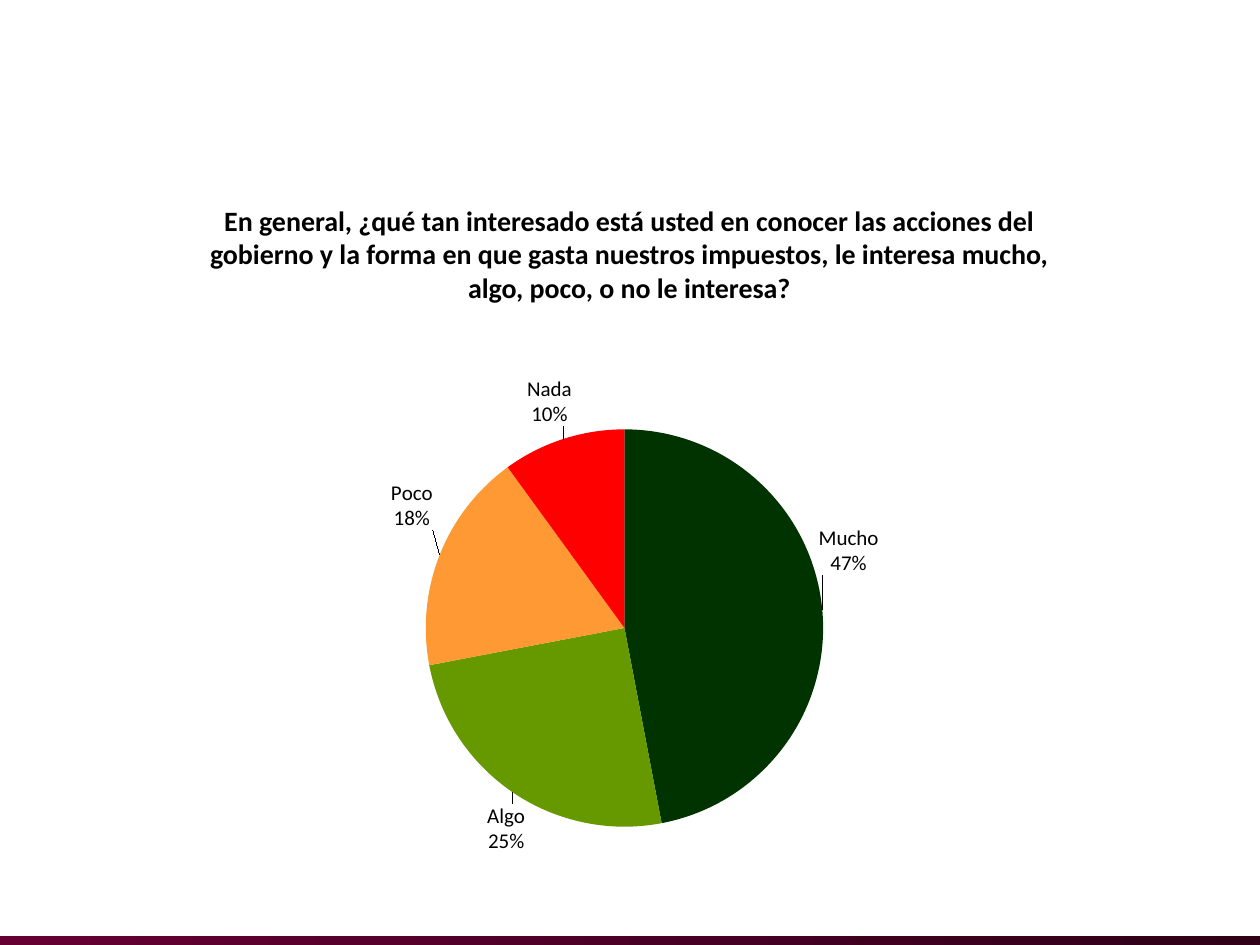
from lxml.etree import SubElement
from pptx import Presentation
from pptx.chart.data import CategoryChartData
from pptx.dml.color import RGBColor
from pptx.enum.chart import XL_CHART_TYPE as ChartType, XL_LABEL_POSITION as LabelPosition
from pptx.enum.shapes import MSO_SHAPE as Shape
from pptx.enum.text import PP_ALIGN as Align
from pptx.oxml.ns import qn
from pptx.util import Emu, Pt

PIXELS_PER_INCH = 126
QUESTION = (
    "En general, ¿qué tan interesado está usted en conocer las acciones del gobierno "
    "y la forma en que gasta nuestros impuestos, le interesa mucho, algo, poco, o no le interesa?"
)
ANSWERS = [
    ("Mucho", 47, "003300", (-0.02, -0.06)),
    ("Algo", 25, "669900", (0.03, 0.01)),
    ("Poco", 18, "FF9933", (0, -0.04)),
    ("Nada", 10, "FF0000", (0.02, -0.01)),
]


def px(length):
    return Emu(round(length * 914400 / PIXELS_PER_INCH))


def color(value):
    return RGBColor.from_string(value)


def set_format(target, values):
    for name, value in values.items():
        setattr(target, name, value)


def fill_layout(layout, values):
    manual = SubElement(layout, qn("c:manualLayout"))
    for name, value in values.items():
        SubElement(manual, qn(f"c:{name}")).set("val", str(value))


class SlideBuilder:
    font_name = "Calibri"
    text_color = "000000"

    def __init__(self, slide):
        self.slide = slide

    def style_font(self, font, size, bold=False):
        set_format(font, {"name": self.font_name, "size": Pt(size), "bold": bold})
        font.color.rgb = color(self.text_color)

    def gradient_bar(self, left, top, width, height, colors):
        bar = self.slide.shapes.add_shape(Shape.RECTANGLE, *map(px, (left, top, width, height)))
        bar.shadow.inherit = False
        bar.line.fill.background()
        bar.fill.gradient()
        bar.fill.gradient_angle = 0
        for stop, value, position in zip(bar.fill.gradient_stops, colors, (0, 1)):
            stop.color.rgb = color(value)
            stop.position = position

    def heading(self, left, top, width, height, text, size):
        box = self.slide.shapes.add_textbox(*map(px, (left, top, width, height)))
        box.text_frame.word_wrap = True
        para = box.text_frame.paragraphs[0]
        para.alignment = Align.CENTER
        span = para.add_run()
        span.text = text
        self.style_font(span.font, size, bold=True)

    def pie(self, left, top, width, height, answers, plot_layout):
        data = CategoryChartData()
        data.categories = [answer[0] for answer in answers]
        data.add_series("Series 1", [answer[1] for answer in answers])
        frame = self.slide.shapes.add_chart(ChartType.PIE, *map(px, (left, top, width, height)), data)
        chart = frame.chart
        set_format(chart, {"has_legend": False, "has_title": False})
        self.style_font(chart.font, 14)
        plot = chart.plots[0]
        plot.vary_by_categories = True

        area = chart.element.find(".//" + qn("c:plotArea"))
        layout = area.find(qn("c:layout"))
        if layout is None:
            layout = SubElement(area, qn("c:layout"))
            area.insert(0, layout)
        fill_layout(layout, plot_layout)

        for index, (_, _, fill_color, offset) in enumerate(answers):
            point = plot.series[0].points[index]
            point.format.fill.solid()
            point.format.fill.fore_color.rgb = color(fill_color)
            self.style_font(point.data_label.font, 12)
            point.data_label.position = LabelPosition.OUTSIDE_END

        for label, answer in zip(chart.element.iter(qn("c:dLbl")), answers):
            layout = SubElement(label, qn("c:layout"))
            label.insert(1, layout)
            fill_layout(layout, dict(zip("xy", answer[3])))
            for name, shown in {"showVal": 0, "showCatName": 1, "showPercent": 1}.items():
                label.find(qn(f"c:{name}")).set("val", str(shown))
            SubElement(label, qn("c:separator")).text = "\n"


def main():
    deck = Presentation()
    set_format(deck, {"slide_width": px(1260), "slide_height": px(945)})
    page = SlideBuilder(deck.slides.add_slide(deck.slide_layouts[6]))
    page.gradient_bar(0, 936, 1260, 9, ("660033", "2F0018"))
    page.heading(171, 197, 917, 115, QUESTION, 16)
    plot_layout = {
        "layoutTarget": "inner", "xMode": "edge", "yMode": "edge",
        "x": 0.13, "y": 0.14, "w": 0.72, "h": 0.79,
    }
    page.pie(354, 336, 552, 546, ANSWERS, plot_layout)
    deck.save("out.pptx")


if __name__ == "__main__":
    main()
